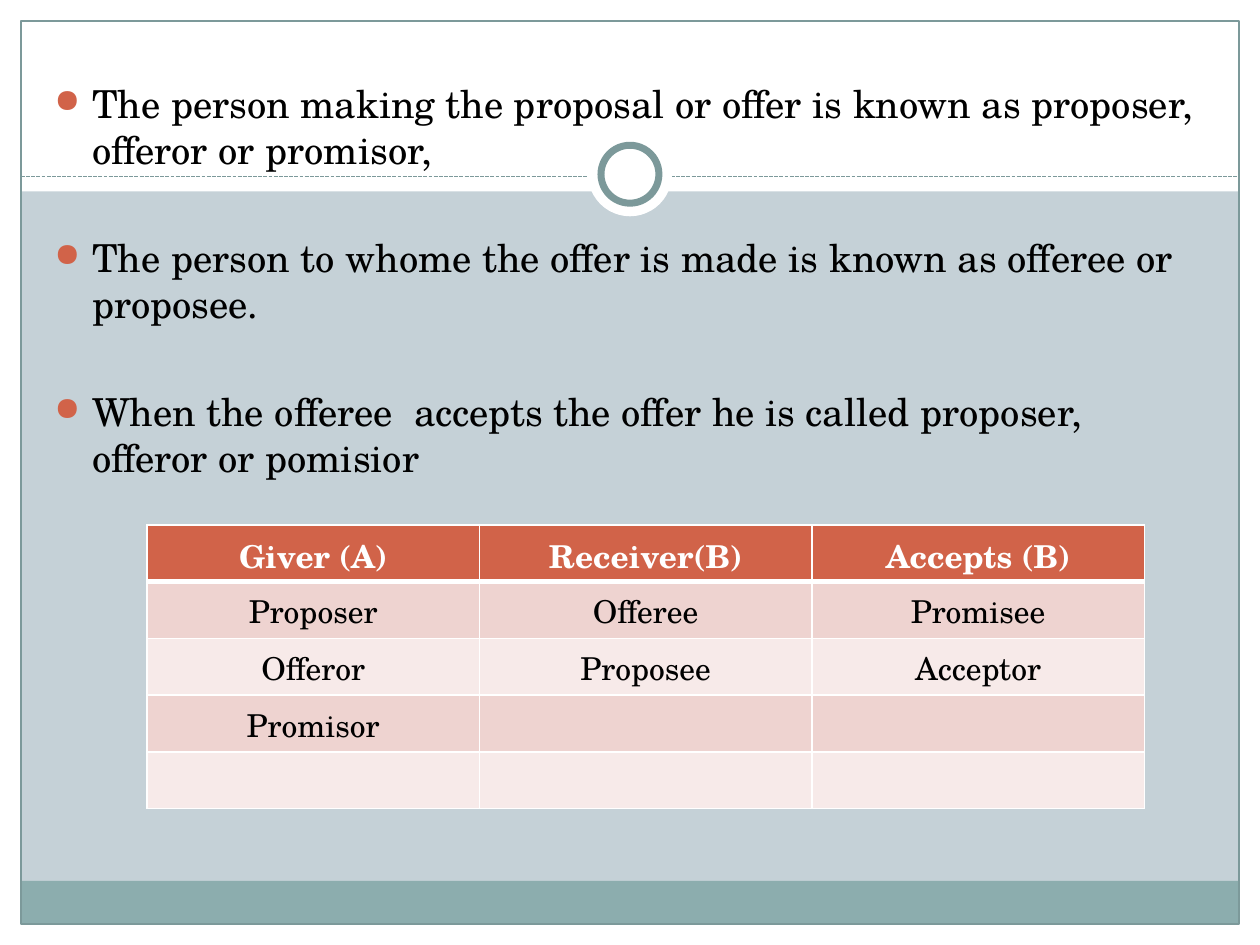
from lxml import etree
from pptx import Presentation
from pptx.dml.color import RGBColor
from pptx.enum import dml, shapes, text
from pptx.oxml import ns
from pptx.util import Inches, Pt

THEME = {
    "font": "TeX Gyre Schola", "body_size": 22, "table_size": 18,
    "ground": "C5D1D7", "white": "FFFFFF", "black": "000000",
    "teal": "8CADAE", "edge": "7C999A", "accent": "D16349",
    "bands": ["EED3D0", "F7EAE9"],
}
COLUMNS, ROWS = 60, 45

deck = Presentation()
deck.slide_width, deck.slide_height = Inches(10), Inches(7.5)
page = deck.slides.add_slide(deck.slide_layouts[6])
page.background.fill.solid()
page.background.fill.fore_color.rgb = RGBColor.from_string(THEME["ground"])


def grid(left, top, width, height):
    across, down = deck.slide_width / COLUMNS, deck.slide_height / ROWS
    return [round(v) for v in (left * across, top * down, width * across, height * down)]


def write(para, words, size, color, bold=False):
    span = para.add_run()
    span.text = words
    span.font.name = THEME["font"]
    span.font.size = Pt(size)
    span.font.bold = bold
    span.font.color.rgb = RGBColor.from_string(THEME[color])


RECT, OVAL = shapes.MSO_SHAPE.RECTANGLE, shapes.MSO_SHAPE.OVAL
backdrop = [
    (RECT, (0, 44, 60, 1), "white", 0),
    (RECT, (0, 0, 60, 9.12), "white", 0),
    (RECT, (0, 0, 1, 45), "white", 0),
    (RECT, (59, 0, 1, 45), "white", 0),
    (RECT, (1, 41.95, 58, 2.05), "teal", 0),
    (RECT, (1, 1, 58, 43), None, 0.75),
    ("divider", (1, 8.4, 58, 0), None, 0.75),
    (OVAL, (28, 6.3, 4, 4), "white", 0),
    (OVAL, (28.62, 6.92, 2.76, 2.76), "white", 4),
]
for kind, area, fill, weight in backdrop:
    left, top, width, height = grid(*area)
    if kind == "divider":
        item = page.shapes.add_connector(
            shapes.MSO_CONNECTOR.STRAIGHT, left, top, left + width, top)
        item.line.dash_style = dml.MSO_LINE.SQUARE_DOT
        etree.SubElement(item.element.spPr, ns.qn("a:effectLst"))
    else:
        item = page.shapes.add_shape(kind, left, top, width, height)
        item.shadow.inherit = False
        if fill:
            item.fill.solid()
            item.fill.fore_color.rgb = RGBColor.from_string(THEME[fill])
        else:
            item.fill.background()
    if weight:
        item.line.color.rgb = RGBColor.from_string(THEME["edge"])
        item.line.width = Pt(weight)
    else:
        item.line.fill.background()

points = [
    "The person making the proposal or offer is known as proposer, offeror or promisor,",
    "The person to whome the offer is made is known as offeree or proposee.",
    "When the offeree  accepts the offer he is called proposer, offeror or pomisior",
]
box = page.shapes.add_textbox(*grid(2, 3.5, 55.8, 36.5))
box.text_frame.word_wrap = True
for index, words in enumerate(points):
    para = box.text_frame.paragraphs[0] if index == 0 else box.text_frame.add_paragraph()
    para.space_before = Pt(35.2 if index else 4.4)
    indent = Inches(0.3)
    properties = para._p.get_or_add_pPr()
    properties.set("marL", str(indent))
    properties.set("indent", str(-indent))
    color = etree.SubElement(properties, ns.qn("a:buClr"))
    etree.SubElement(color, ns.qn("a:srgbClr"), val=THEME["accent"])
    etree.SubElement(properties, ns.qn("a:buSzPct"), val="85000")
    etree.SubElement(properties, ns.qn("a:buChar"), char="●")
    write(para, words, THEME["body_size"], "black")

roles = [
    ["Giver (A)", "Receiver(B)", "Accepts (B)"],
    ["Proposer", "Offeree", "Promisee"],
    ["Offeror", "Proposee", "Acceptor"],
    ["Promisor", "", ""],
    ["", "", ""],
]
table = page.shapes.add_table(len(roles), len(roles[0]), *grid(7, 25, 47.5, 13.5)).table
for r, row in enumerate(roles):
    for c, words in enumerate(row):
        cell = table.cell(r, c)
        properties = cell._tc.get_or_add_tcPr()
        for side in "LRTB":
            heavy = (r == 0 and side == "B") or (r == 1 and side == "T")
            border = etree.SubElement(
                properties, ns.qn("a:ln" + side), w=str(Pt(3 if heavy else 1)))
            solid = etree.SubElement(border, ns.qn("a:solidFill"))
            etree.SubElement(solid, ns.qn("a:srgbClr"), val=THEME["white"])
        cell.fill.solid()
        fill = THEME["bands"][(r - 1) % 2] if r else THEME["accent"]
        cell.fill.fore_color.rgb = RGBColor.from_string(fill)
        para = cell.text_frame.paragraphs[0]
        para.alignment = text.PP_ALIGN.CENTER
        if words:
            write(para, words, THEME["table_size"], "black" if r else "white", r == 0)

deck.save("out.pptx")
